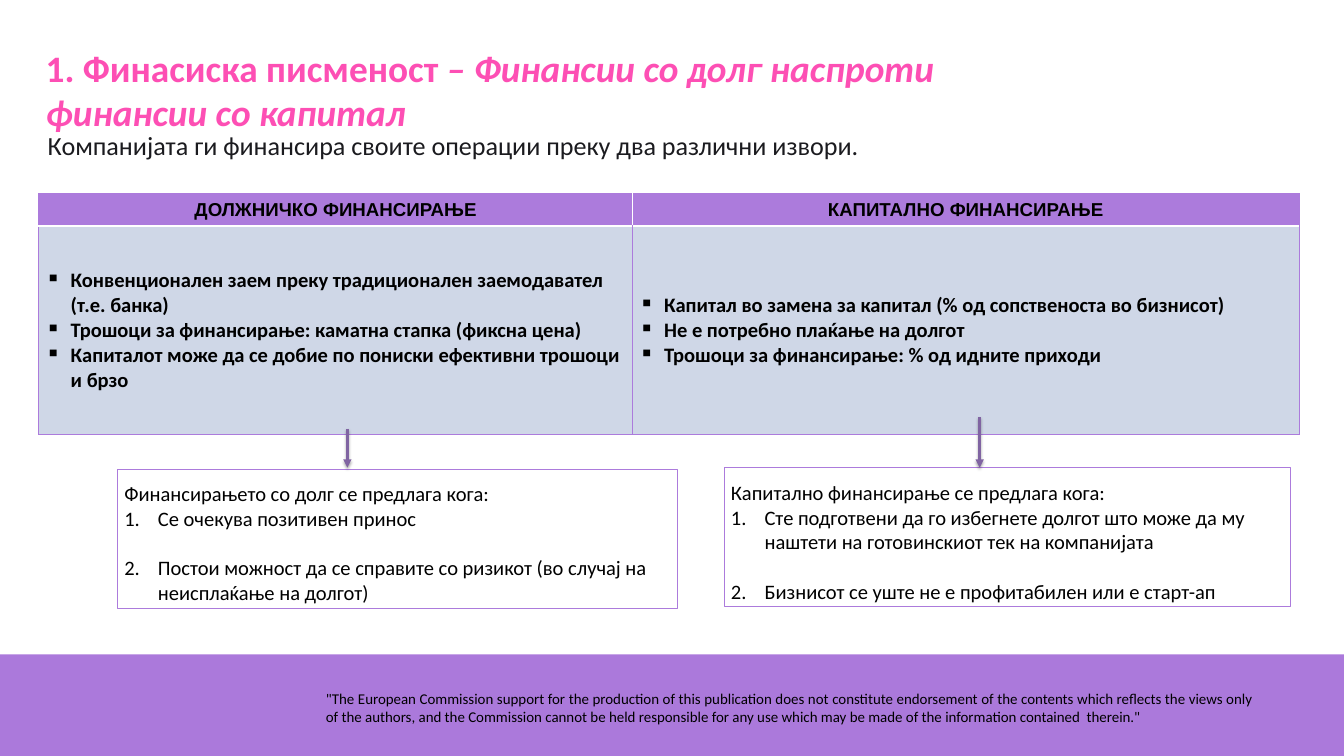
from lxml import etree
from pptx import Presentation
from pptx import util as u
from pptx.dml.color import RGBColor
from pptx.enum import shapes, text
from pptx.oxml import ns

PURPLE = RGBColor(0xAC, 0x7B, 0xDC)
BAND = RGBColor(0xAB, 0x79, 0xDB)
PINK = RGBColor(0xFD, 0x4F, 0xB4)
CELL = RGBColor(0xCF, 0xD7, 0xE7)
ARROW = RGBColor(0x80, 0x64, 0xA2)
INK = RGBColor(0x1B, 0x1B, 0x1F)
BLACK = RGBColor(0, 0, 0)
WHITE = RGBColor(0xFF, 0xFF, 0xFF)

COLUMNS = [
    ("ДОЛЖНИЧКО ФИНАНСИРАЊЕ", 22.43, [
        "Конвенционален заем преку традиционален заемодавател (т.е. банка)",
        "Трошоци за финансирање: каматна стапка (фиксна цена)",
        "Капиталот може да се добие по пониски ефективни трошоци и брзо"]),
    ("КАПИТАЛНО ФИНАНСИРАЊЕ", 25.2, [
        "Капитал во замена за капитал (% од сопственоста во бизнисот)",
        "Не е потребно плаќање на долгот",
        "Трошоци за финансирање: % од идните приходи"]),
]
ADVICE = [
    ((4.45, 17.73, 21.16, 5.26), "Финансирањето со долг се предлага кога:", [
        "Се очекува позитивен принос",
        "Постои можност да се справите со ризикот (во случај на неисплаќање на долгот)"]),
    ((27.38, 17.68, 21.39, 5.26), "Капитално финансирање се предлага кога:", [
        "Сте подготвени да го избегнете долгот што може да му наштети на готовинскиот тек на компанијата",
        "Бизнисот се уште не е профитабилен или е старт-ап"]),
]
ARROWS = [(13.13, 16.21), (37.03, 15.77)]
FOOTER = ('"The European Commission support for the production of this publication does not '
          "constitute endorsement of the contents which reflects the views only of the authors, "
          "and the Commission cannot be held responsible for any use which may be made of the "
          'information contained  therein."')


def lengths(*values):
    return [u.Cm(value) for value in values]


def add_element(parent, tag, **attributes):
    return etree.SubElement(parent, ns.qn(tag), {k: str(v) for k, v in attributes.items()})


def add_color(parent, color):
    return add_element(add_element(parent, "a:solidFill"), "a:srgbClr", val=color)


def add_span(para, words, size, color=BLACK, bold=False, italic=False, face="Calibri"):
    span = para.add_run()
    span.text = words
    font = span.font
    font.name, font.size, font.bold, font.italic = face, u.Pt(size), bold, italic
    font.color.rgb = color


def set_marker(para, tag, hang, **attributes):
    properties = para._p.get_or_add_pPr()
    properties.set("marL", str(u.Cm(hang)))
    properties.set("indent", str(-u.Cm(hang)))
    add_element(add_element(properties, "a:buClr"), "a:srgbClr", val=BLACK)
    add_element(properties, tag, **attributes)


def prepare_frame(frame):
    frame.word_wrap = True
    frame.auto_size = text.MSO_AUTO_SIZE.NONE
    frame.vertical_anchor = text.MSO_ANCHOR.TOP
    return frame.paragraphs[0]


def place(box, *position):
    box.left, box.top, box.width, box.height = lengths(*position)
    return prepare_frame(box.text_frame)


def fill_heading(page):
    para = place(page.shapes.title, 1.47, 1.57, 34.72, 3.68)
    para.alignment = text.PP_ALIGN.LEFT
    add_span(para, "1. Финасиска писменост ", 40, PINK, bold=True)
    add_span(para, "– Финансии со долг наспроти финансии со капитал", 40, PINK, True, True)

    para = place(page.placeholders[1], 1.55, 4.78, 38.89, 2)
    properties = para._p.get_or_add_pPr()
    properties.set("marL", "0")
    properties.set("indent", "0")
    add_element(properties, "a:buNone")
    para.space_before = u.Pt(0)
    para.alignment = text.PP_ALIGN.JUSTIFY
    add_span(para, "Компанијата ги финансира своите операции преку два различни извори.", 28, INK)


def add_footer(page):
    band = page.shapes.add_shape(shapes.MSO_SHAPE.RECTANGLE, *lengths(0, 24.74, 50.8, 3.84))
    band.shadow.inherit = False
    band.fill.solid()
    band.fill.fore_color.rgb = BAND
    band.line.fill.background()
    box = page.shapes.add_textbox(*lengths(12.07, 25.93, 35.56, 1.4))
    para = prepare_frame(box.text_frame)
    para.alignment = text.PP_ALIGN.JUSTIFY
    para.line_spacing = 1.01
    add_span(para, FOOTER, 16)


def style_cell(cell, fill, borders):
    cell.vertical_anchor = text.MSO_ANCHOR.MIDDLE
    properties = cell._tc.get_or_add_tcPr()
    for side, (color, width) in zip("LRTB", borders):
        line = add_element(properties, f"a:ln{side}", w=u.Pt(width))
        add_color(line, color)
    cell.fill.solid()
    cell.fill.fore_color.rgb = fill


def add_comparison(page):
    width = sum(column[1] for column in COLUMNS)
    grid = page.shapes.add_table(2, len(COLUMNS), *lengths(1.47, 7.32, width, 9.12)).table
    grid.rows[0].height, grid.rows[1].height = lengths(1.22, 7.9)
    edge, divider, rule = (PURPLE, 1), (WHITE, 1), (WHITE, 3)
    for index, (heading, width, points) in enumerate(COLUMNS):
        grid.columns[index].width = u.Cm(width)
        head, body = grid.cell(0, index), grid.cell(1, index)
        sides = (edge, divider) if index == 0 else (divider, edge)
        style_cell(head, PURPLE, (*sides, edge, rule))
        style_cell(body, CELL, (edge, edge, rule, edge))
        para = head.text_frame.paragraphs[0]
        para.alignment = text.PP_ALIGN.CENTER
        add_span(para, heading, 20, bold=True, face="Arial")
        for number, point in enumerate(points):
            frame = body.text_frame
            para = frame.add_paragraph() if number else frame.paragraphs[0]
            set_marker(para, "a:buChar", 0.95, char="▪")
            add_span(para, point, 22, bold=True)


def add_advice(page, position, heading, reasons):
    box = page.shapes.add_shape(shapes.MSO_SHAPE.RECTANGLE, *lengths(*position))
    box.shadow.inherit = False
    box.fill.background()
    box.line.color.rgb = PURPLE
    box.line.width = u.Pt(0.75)
    para = prepare_frame(box.text_frame)
    box.text_frame.margin_top = u.Cm(0.47)
    para.alignment = text.PP_ALIGN.LEFT
    add_span(para, heading, 22)
    for number, reason in enumerate(reasons):
        para = box.text_frame.add_paragraph()
        para.alignment = text.PP_ALIGN.LEFT
        set_marker(para, "a:buAutoNum", 1.27, type="arabicPeriod")
        if number:
            para.space_before = u.Pt(26.5)
        add_span(para, reason, 22)


def add_arrow(page, x, top):
    arrow = page.shapes.add_connector(shapes.MSO_CONNECTOR.STRAIGHT, *lengths(x, top, x, 17.68))
    arrow.line.color.rgb = ARROW
    arrow.line.width = u.Pt(3)
    add_element(arrow.line._get_or_add_ln(), "a:tailEnd", type="triangle")
    effects = add_element(arrow._element.spPr, "a:effectLst")
    shadow = add_element(effects, "a:outerShdw", blurRad=u.Pt(3.1), dist=u.Pt(1.8),
                         dir=5400000, rotWithShape=0)
    add_element(add_element(shadow, "a:srgbClr", val=BLACK), "a:alpha", val=35000)


def main():
    deck = Presentation()
    deck.slide_width, deck.slide_height = lengths(50.8, 28.58)
    page = deck.slides.add_slide(deck.slide_layouts[1])
    add_footer(page)
    fill_heading(page)
    add_comparison(page)
    for position, heading, reasons in ADVICE:
        add_advice(page, position, heading, reasons)
    for x, top in ARROWS:
        add_arrow(page, x, top)
    deck.save("out.pptx")


if __name__ == "__main__":
    main()
